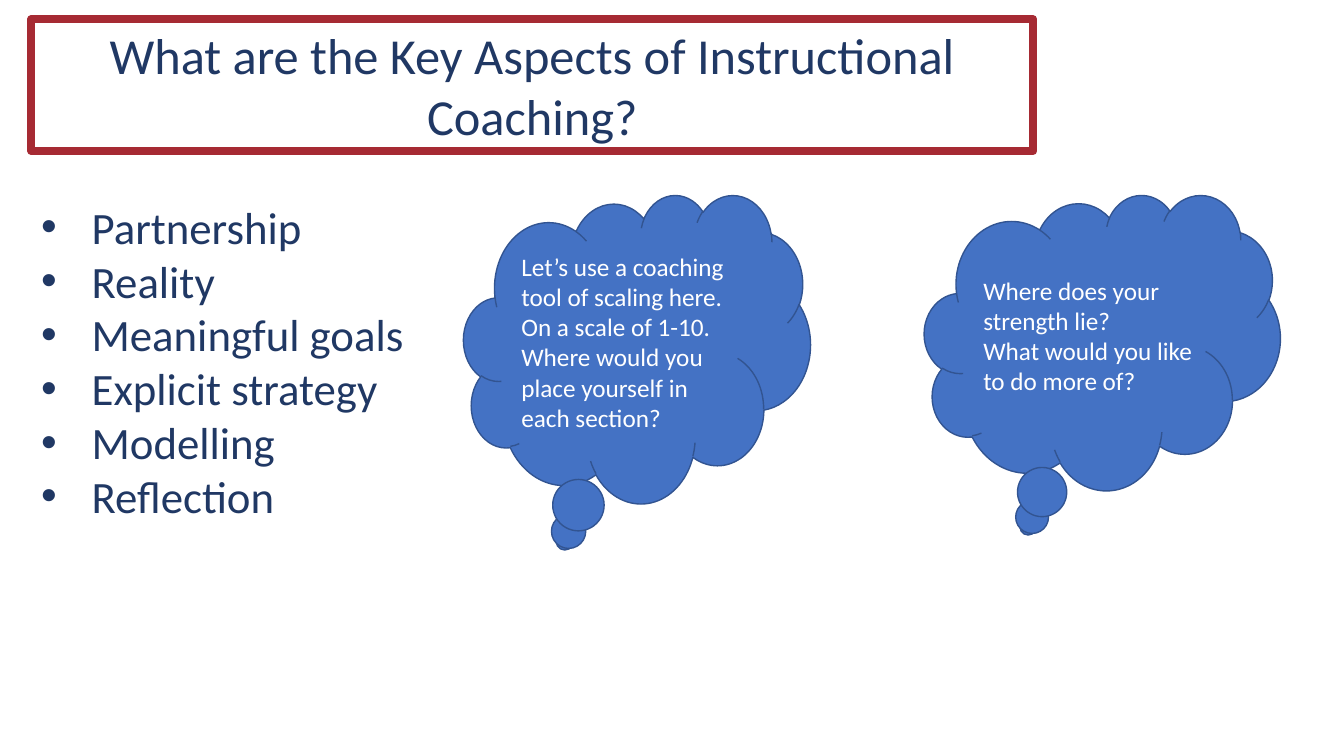
from dataclasses import dataclass

from lxml import etree
from pptx import Presentation
from pptx import util as u
from pptx.dml.color import RGBColor
from pptx.enum import shapes, text
from pptx.oxml.ns import qn


@dataclass(frozen=True)
class Theme:
    font: str = "Calibri"
    navy: str = "203864"
    red: str = "A62A33"
    blue: str = "4472C4"
    outline: str = "325491"
    white: str = "FFFFFF"
    title_size: int = 36
    list_size: int = 32
    cloud_size: int = 18


THEME = Theme()
WIDTH, HEIGHT = u.Inches(13.33), u.Inches(7.5)

# Shared edges, in percent of the slide's width or height
LEFT = 2.33
BODY_TOP = 25.73

TITLE = "What are the Key Aspects of Instructional Coaching?"
ASPECTS = ["Partnership", "Reality", "Meaningful goals",
           "Explicit strategy", "Modelling", "Reflection"]
SCALING = ["Let’s use a coaching tool of scaling here. On a scale of 1-10. "
           "Where would you place yourself in each section?"]
STRENGTHS = ["Where does your strength lie?", "What would you like to do more of?"]


def box(left, top, width, height):
    """Turn percentages of the slide into lengths."""
    return (int(WIDTH * left / 100), int(HEIGHT * top / 100),
            int(WIDTH * width / 100), int(HEIGHT * height / 100))


def set_outline(sp, color, weight):
    sp.line.color.rgb = RGBColor.from_string(color)
    sp.line.width = u.Pt(weight)


def add_bullet(p):
    pPr = p._p.get_or_add_pPr()
    pPr.set("marL", str(u.Inches(0.5)))
    pPr.set("indent", str(-u.Inches(0.5)))
    etree.SubElement(pPr, qn("a:buFont"), typeface="Arial")
    etree.SubElement(pPr, qn("a:buChar"), char="•")


def write(sp, lines, size, color, anchor, align=text.PP_ALIGN.LEFT, bullets=False):
    tf = sp.text_frame
    tf.text = "\n".join(lines)
    tf.word_wrap = True
    tf.auto_size = text.MSO_AUTO_SIZE.NONE
    tf.vertical_anchor = anchor
    for p in tf.paragraphs:
        p.alignment = align
        p.line_spacing = 1.0
        p.space_before = u.Pt(0)
        if bullets:
            add_bullet(p)
        for r in p.runs:
            r.font.name = THEME.font
            r.font.size = u.Pt(size)
            r.font.color.rgb = RGBColor.from_string(color)


def add_title(slide):
    sp = slide.shapes.title
    sp.left, sp.top, sp.width, sp.height = box(LEFT, 2.53, 74.55, 17.47)
    set_outline(sp, THEME.red, 5.5)
    write(sp, [TITLE], THEME.title_size, THEME.navy,
          text.MSO_ANCHOR.TOP, text.PP_ALIGN.CENTER)


def add_list(slide, lines, place):
    sp = slide.shapes.add_textbox(*box(*place))
    write(sp, lines, THEME.list_size, THEME.navy, text.MSO_ANCHOR.TOP, bullets=True)


def add_cloud(slide, lines, place):
    sp = slide.shapes.add_shape(shapes.MSO_SHAPE.CLOUD_CALLOUT, *box(*place))
    sp.shadow.inherit = False
    sp.fill.solid()
    sp.fill.fore_color.rgb = RGBColor.from_string(THEME.blue)
    set_outline(sp, THEME.outline, 1)
    write(sp, lines, THEME.cloud_size, THEME.white, text.MSO_ANCHOR.MIDDLE)


def main():
    prs = Presentation()
    prs.slide_width, prs.slide_height = WIDTH, HEIGHT
    slide = prs.slides.add_slide(prs.slide_layouts[5])

    # Framed title and list of aspects
    add_title(slide)
    add_list(slide, ASPECTS, (LEFT, BODY_TOP, 58.05, 48.53))

    # Thought clouds with coaching questions
    add_cloud(slide, SCALING, (34.5, BODY_TOP, 25.8, 40.8))
    add_cloud(slide, STRENGTHS, (68.78, BODY_TOP, 26.48, 39.07))

    prs.save("out.pptx")


if __name__ == "__main__":
    main()
